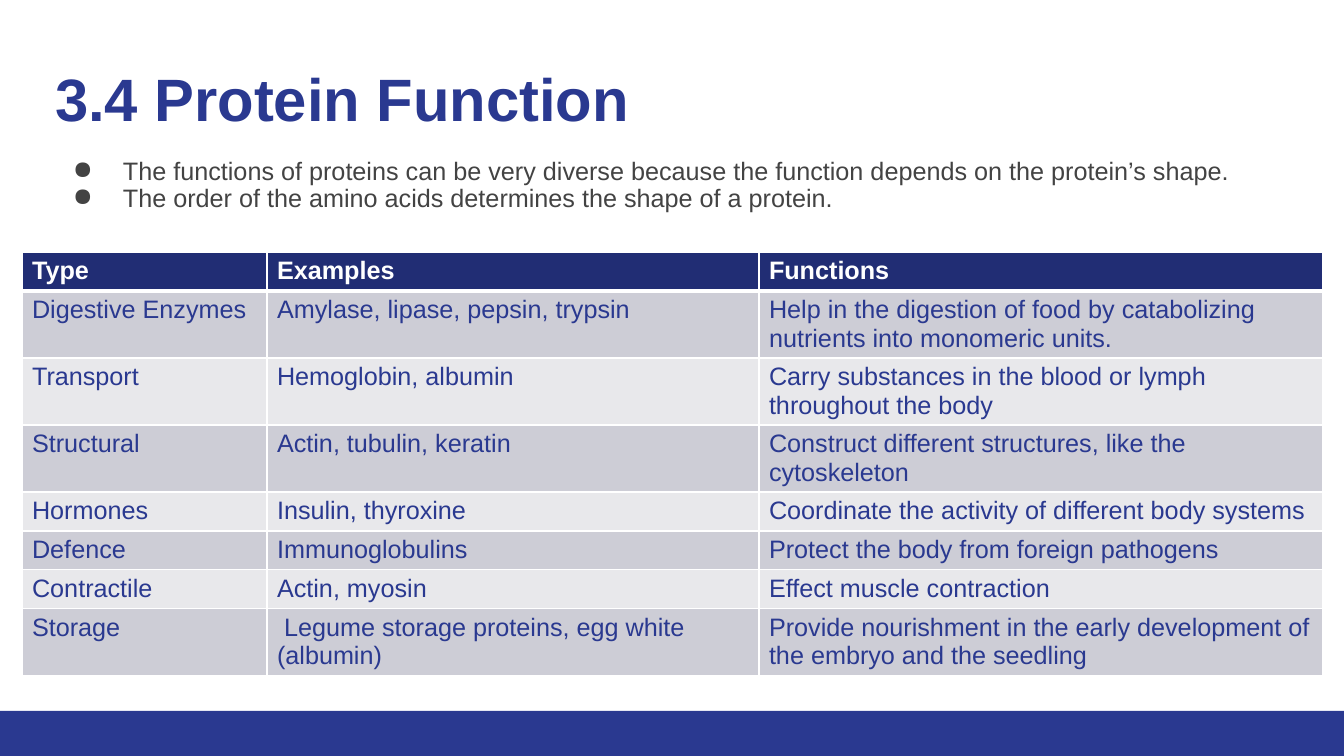
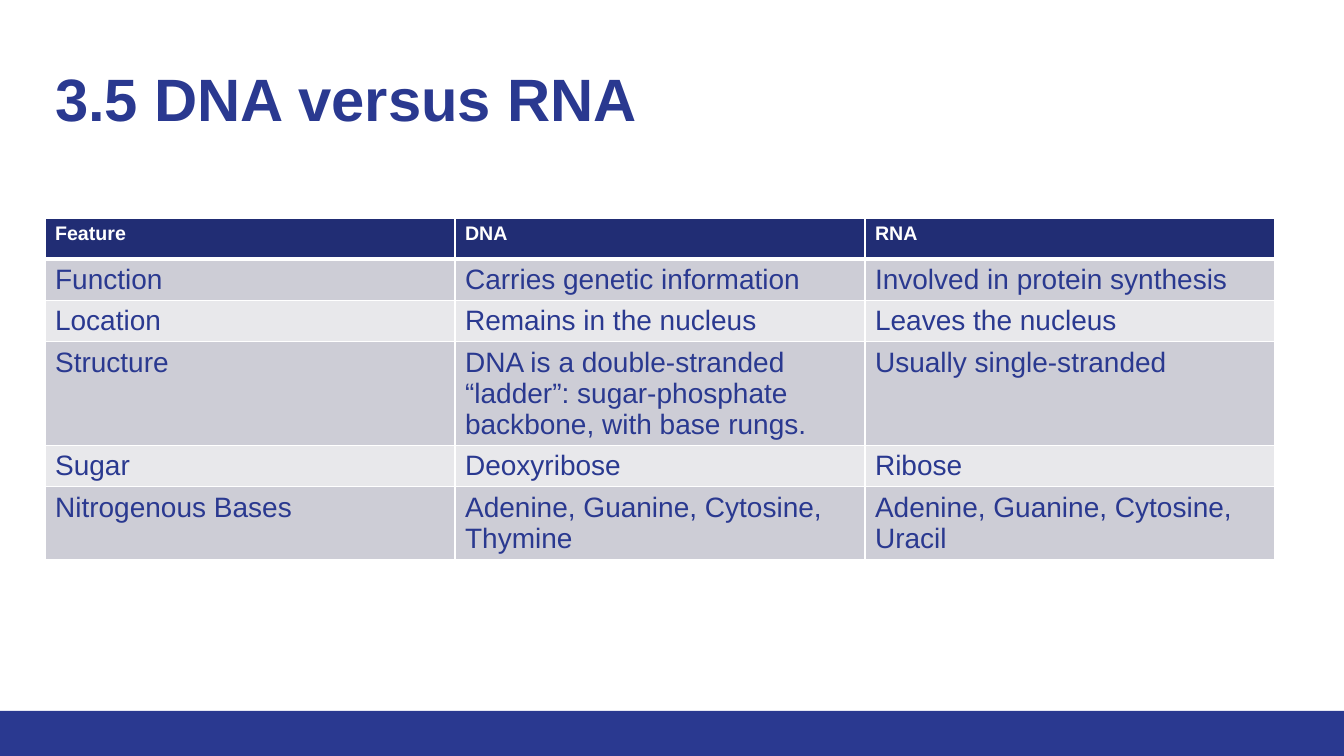
from dataclasses import dataclass

from lxml.etree import SubElement
from pptx import Presentation
from pptx.dml.color import RGBColor
from pptx.enum.shapes import MSO_SHAPE as Shape
from pptx.enum.text import MSO_ANCHOR as Anchor, MSO_AUTO_SIZE as AutoSize, PP_ALIGN as Align
from pptx.oxml.ns import qn
from pptx.util import Emu, Pt

PROTEIN_BULLETS = [
    "The functions of proteins can be very diverse because the function depends on the protein’s shape.",
    "The order of the amino acids determines the shape of a protein.",
]

PROTEIN_ROWS = [
    ("Type", "Examples", "Functions"),
    ("Digestive Enzymes", "Amylase, lipase, pepsin, trypsin",
     "Help in the digestion of food by catabolizing nutrients into monomeric units."),
    ("Transport", "Hemoglobin, albumin", "Carry substances in the blood or lymph throughout the body"),
    ("Structural", "Actin, tubulin, keratin", "Construct different structures, like the cytoskeleton"),
    ("Hormones", "Insulin, thyroxine", "Coordinate the activity of different body systems"),
    ("Defence", "Immunoglobulins", "Protect the body from foreign pathogens"),
    ("Contractile", "Actin, myosin", "Effect muscle contraction"),
    ("Storage", " Legume storage proteins, egg white (albumin)",
     "Provide nourishment in the early development of the embryo and the seedling"),
]

NUCLEIC_ACID_ROWS = [
    ("Feature", "DNA", "RNA"),
    ("Function", "Carries genetic information", "Involved in protein synthesis"),
    ("Location", "Remains in the nucleus", "Leaves the nucleus"),
    ("Structure", "DNA is a double-stranded “ladder”: sugar-phosphate backbone, with base rungs.",
     "Usually single-stranded"),
    ("Sugar", "Deoxyribose", "Ribose"),
    ("Nitrogenous Bases", "Adenine, Guanine, Cytosine, Thymine", "Adenine, Guanine, Cytosine, Uracil"),
]

SLIDES = [
    dict(title="3.4 Protein Function", bullets=PROTEIN_BULLETS,
         table=dict(rows=PROTEIN_ROWS, left=22, top=252, widths=[245, 492, 564],
                    heights=[39, 67, 67, 67, 39, 39, 39, 67], header_size=18, body_size=18)),
    dict(title="3.5 DNA versus RNA", bullets=[],
         table=dict(rows=NUCLEIC_ACID_ROWS, left=45, top=218, widths=[410] * 3,
                    heights=[41] * 6, header_size=14, body_size=20)),
]


@dataclass(frozen=True)
class Theme:
    font: str = "Arial"
    primary: str = "2A3990"
    header: str = "212D74"
    bands: tuple = ("CDCDD6", "E8E8EB")
    white: str = "FFFFFF"
    text: str = "434343"
    title_size: float = 42.7
    bullet_size: float = 18
    line_spacing: float = 0.9
    rule: float = 1
    header_rule: float = 3


THEME = Theme()
WIDTH, HEIGHT = 1344, 756
BAND_TOP = 711
TITLE_BOX = (45, 60, 1252, 90)
BULLET_BOX = (45, 149, 1252, 90)
TEXT_INSET = 10
BULLET_MARGIN, BULLET_HANG = 68, 50


def px(length):
    return Emu(round(length * 914400 / 100.8))


def color(value):
    return RGBColor.from_string(value)


def style(paragraph, size, ink, bold=False):
    font = paragraph.font
    font.name = THEME.font
    font.size = Pt(size)
    font.bold = bold
    font.color.rgb = color(ink)


def place(shape, box):
    shape.left, shape.top, shape.width, shape.height = map(px, box)


def prepare_frame(frame):
    frame.word_wrap = True
    frame.auto_size = AutoSize.NONE
    frame.vertical_anchor = Anchor.TOP
    frame.margin_left = frame.margin_right = px(TEXT_INSET)
    frame.margin_top = frame.margin_bottom = px(TEXT_INSET)


def add_band(slide):
    band = slide.shapes.add_shape(Shape.RECTANGLE, *map(px, (0, BAND_TOP, WIDTH, HEIGHT - BAND_TOP)))
    band.shadow.inherit = False
    band.fill.solid()
    band.fill.fore_color.rgb = color(THEME.primary)
    band.line.fill.background()
    slide.slide_layout.shapes.element.append(band.element)


def set_title(slide, text):
    title = slide.shapes.title
    place(title, TITLE_BOX)
    prepare_frame(title.text_frame)
    title.text_frame.text = text
    paragraph = title.text_frame.paragraphs[0]
    paragraph.alignment = Align.LEFT
    paragraph.line_spacing = THEME.line_spacing
    style(paragraph, THEME.title_size, THEME.primary, bold=True)


def add_bullets(slide, items):
    frame = slide.shapes.add_textbox(*map(px, BULLET_BOX)).text_frame
    prepare_frame(frame)
    frame.text = "\n".join(items)
    for paragraph in frame.paragraphs:
        paragraph.line_spacing = THEME.line_spacing
        style(paragraph, THEME.bullet_size, THEME.text)
        properties = paragraph._p.get_or_add_pPr()
        properties.set("marL", str(px(BULLET_MARGIN)))
        properties.set("indent", str(-px(BULLET_HANG)))
        SubElement(properties, qn("a:buChar"), char="●")


def set_borders(cell, widths):
    properties = cell._tc.get_or_add_tcPr()
    for edge, width in widths.items():
        line = SubElement(properties, qn(f"a:ln{edge}"), w=str(Pt(width)))
        fill = SubElement(line, qn("a:solidFill"))
        SubElement(fill, qn("a:srgbClr"), val=THEME.white)


def format_cell(cell, text, row, size):
    is_header = row == 0
    rule = THEME.rule
    if is_header:
        borders = dict(L=rule, R=rule, T=rule, B=THEME.header_rule)
        fill, ink = THEME.header, THEME.white
    else:
        borders = dict(L=rule, R=rule, B=rule)
        fill, ink = THEME.bands[(row - 1) % 2], THEME.primary
    set_borders(cell, borders)
    cell.fill.solid()
    cell.fill.fore_color.rgb = color(fill)
    cell.text = text
    style(cell.text_frame.paragraphs[0], size, ink, bold=is_header)


def add_table(slide, rows, left, top, widths, heights, header_size, body_size):
    box = (left, top, sum(widths), sum(heights))
    table = slide.shapes.add_table(len(rows), len(widths), *map(px, box)).table
    for column, width in zip(table.columns, widths):
        column.width = px(width)
    for row, (texts, height) in enumerate(zip(rows, heights)):
        table.rows[row].height = px(height)
        size = body_size if row else header_size
        for column, text in enumerate(texts):
            format_cell(table.cell(row, column), text, row, size)


def main():
    presentation = Presentation()
    presentation.slide_width, presentation.slide_height = px(WIDTH), px(HEIGHT)
    layout = presentation.slide_layouts.get_by_name("Title Only")
    for number, content in enumerate(SLIDES):
        slide = presentation.slides.add_slide(layout)
        if number == 0:
            add_band(slide)
        set_title(slide, content["title"])
        if content["bullets"]:
            add_bullets(slide, content["bullets"])
        add_table(slide, **content["table"])
    presentation.save("out.pptx")


if __name__ == "__main__":
    main()
